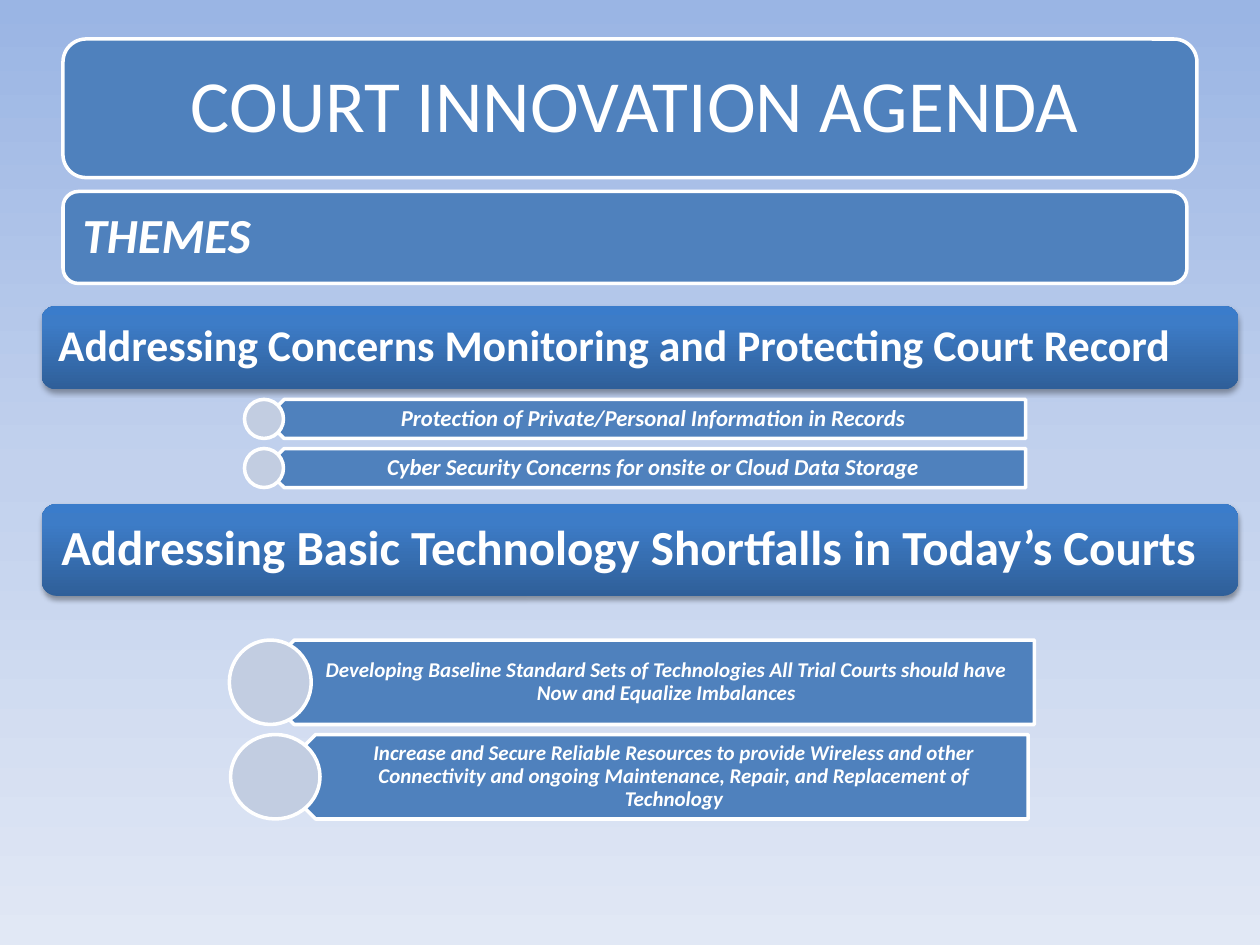
from lxml.etree import SubElement as Sub
from pptx import Presentation
from pptx.dml.color import RGBColor as Rgb
from pptx.enum.shapes import MSO_SHAPE as Kind
from pptx.enum.text import MSO_ANCHOR as Anchor, PP_ALIGN as Align
from pptx.oxml.ns import qn
from pptx.util import Inches, Pt

THEME = {
    "font": "Calibri", "white": "FFFFFF", "blue": "4F81BD", "dot": "C2CDE1",
    "sky": [(0, "9AB5E4"), (50, "C2D1ED"), (100, "E1E8F5")],
    "gloss": [(0, "2F5F99"), (80, "3D7CC7"), (100, "3A7CCB")],
    "title": 42, "head": 28, "long": 25, "item": 13, "note": 12,
}

# Bands: text, box, size, glossy, bold, italic, padding, left indent
BANDS = [
    ("COURT INNOVATION AGENDA", (0.5, 0.31, 9, 1.1), "title",
     False, False, False, 0.17, 0.79),
    ("THEMES", (0.5, 1.52, 8.92, 0.73), "head",
     False, True, True, 0.12, 0),
    ("Addressing Concerns Monitoring and Protecting Court Record",
     (0.33, 2.43, 9.5, 0.66), "long", True, True, False, 0.1, 0),
    ("Addressing Basic Technology Shortfalls in Today’s Courts",
     (0.33, 4, 9.5, 0.73), "head", True, True, False, 0.12, 0),
]

# Lists: size, left and right padding, rows of (text, arrow box, dot left, dot width)
LISTS = [
    ("item", 0.14, 0.1, [
        ("Protection of Private/Personal Information in Records",
         (2.1, 3.17, 6.04, 0.31), 1.94, 0.31),
        ("Cyber Security Concerns for onsite or Cloud Data Storage",
         (2.1, 3.56, 6.04, 0.31), 1.94, 0.31),
    ]),
    ("note", 0.29, 0.09, [
        ("Developing Baseline Standard Sets of Technologies All Trial Courts "
         "should have Now and Equalize Imbalances",
         (2, 5.08, 6.21, 0.67), 1.82, 0.65),
        ("Increase and Secure Reliable Resources to provide Wireless and other "
         "Connectivity and ongoing Maintenance, Repair, and Replacement of "
         "Technology",
         (2.17, 5.83, 5.99, 0.67), 1.83, 0.71),
    ]),
]


def blend(fill, root, stops, angle):
    """Fill with a gradient of any number of stops."""
    fill.gradient()
    grad = root.find(".//" + qn("a:gradFill"))
    for part in list(grad):
        grad.remove(part)
    row = Sub(grad, qn("a:gsLst"))
    for pos, tone in stops:
        stop = Sub(row, qn("a:gs"), pos=str(pos * 1000))
        Sub(stop, qn("a:srgbClr"), val=tone)
    Sub(grad, qn("a:lin"), ang=str(angle * 60000), scaled="0")


def add_form(group, kind, box, tone):
    form = group.shapes.add_shape(kind, *map(Inches, box))
    form.shadow.inherit = False
    form.fill.solid()
    form.fill.fore_color.rgb = Rgb.from_string(THEME[tone])
    form.line.color.rgb = Rgb.from_string(THEME["white"])
    form.line.width = Pt(2)
    return form


def add_gloss(form):
    root = form._element.spPr
    form.line.fill.background()
    blend(form.fill, root, THEME["gloss"], 270)
    glow = Sub(root.find(qn("a:effectLst")), qn("a:outerShdw"),
               blurRad=str(Pt(3.1)), dist=str(Pt(1.8)), dir="5400000",
               rotWithShape="0")
    tone = Sub(glow, qn("a:srgbClr"), val="000000")
    Sub(tone, qn("a:alpha"), val="35000")


def add_text(group, text, box, pads, size, bold, slant, align):
    frame = group.shapes.add_textbox(*map(Inches, box)).text_frame
    frame.word_wrap = True
    frame.vertical_anchor = Anchor.MIDDLE
    (frame.margin_left, frame.margin_top,
     frame.margin_right, frame.margin_bottom) = map(Inches, pads)
    para = frame.paragraphs[0]
    para.text = text
    para.alignment = align
    para.line_spacing = 0.9
    font = para.font
    font.name, font.size = THEME["font"], Pt(THEME[size])
    font.bold, font.italic = bold, slant
    font.color.rgb = Rgb.from_string(THEME["white"])


def add_band(slide, text, box, size, gloss, bold, slant, pad, indent):
    group = slide.shapes.add_group_shape()
    form = add_form(group, Kind.ROUNDED_RECTANGLE, box, "blue")
    if gloss:
        add_gloss(form)
    left, top, wide, high = box
    gap = high * 0.05  # keeps the text inside the round corners
    inner = (left + gap, top + gap, wide - 2 * gap, high - 2 * gap)
    add_text(group, text, inner, (pad + indent, pad, pad, pad),
             size, bold, slant, Align.LEFT)


def add_list(slide, size, near, far, rows):
    group = slide.shapes.add_group_shape()
    for text, box, dot, span in rows:
        left, top, wide, high = box
        add_form(group, Kind.PENTAGON, box, "blue").rotation = 180
        tip = high / 4
        add_text(group, text, (left + tip, top, wide - tip, high),
                 (near, 0.05, far, 0.05), size, True, True, Align.CENTER)
        add_form(group, Kind.OVAL, (dot, top, span, high), "dot")


def main():
    deck = Presentation()
    deck.slide_width, deck.slide_height = Inches(10), Inches(7.5)
    slide = deck.slides.add_slide(deck.slide_layouts[6])
    blend(slide.background.fill, slide._element, THEME["sky"], 90)

    for band in BANDS:
        add_band(slide, *band)
    for part in LISTS:
        add_list(slide, *part)
    deck.save("out.pptx")


if __name__ == "__main__":
    main()
